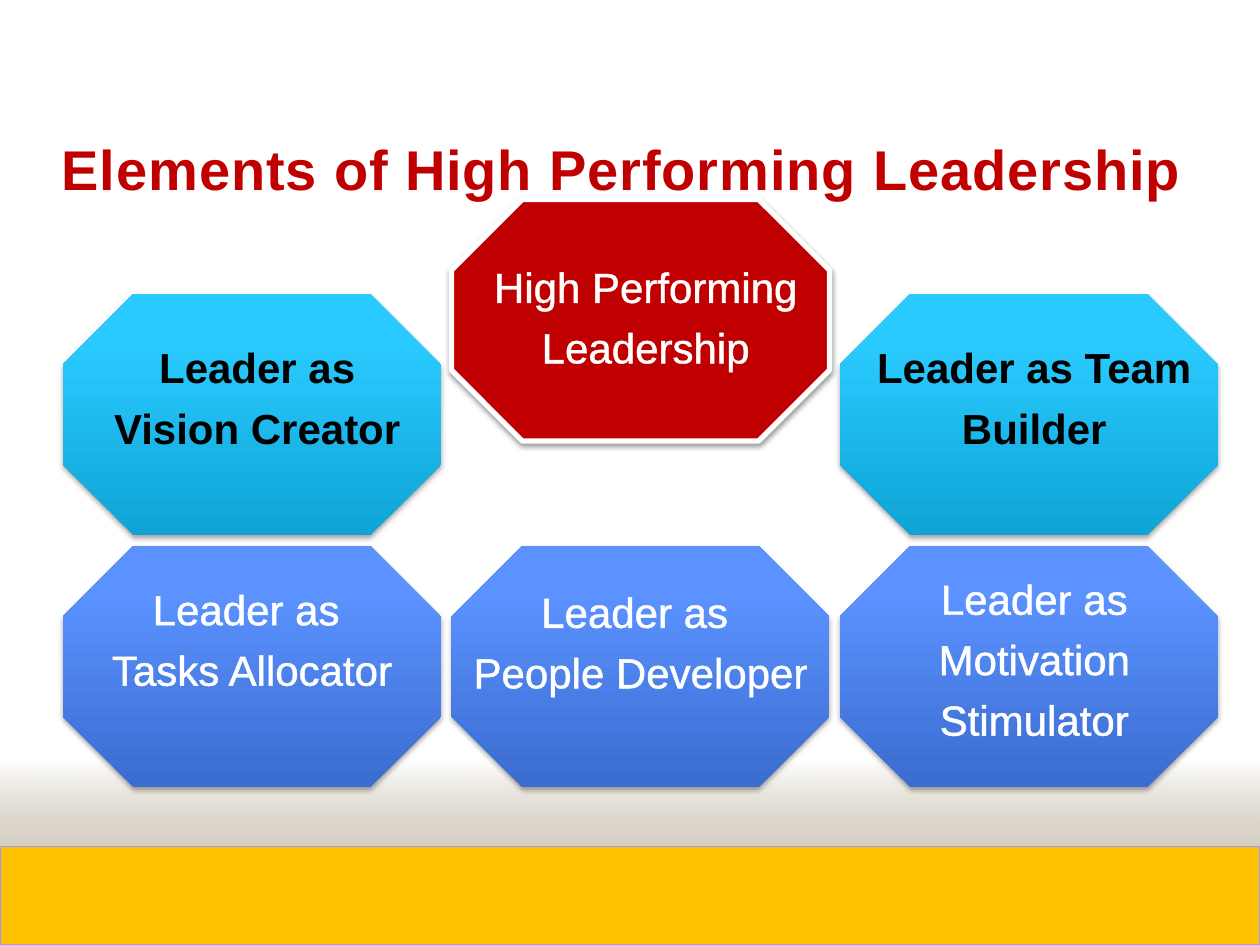
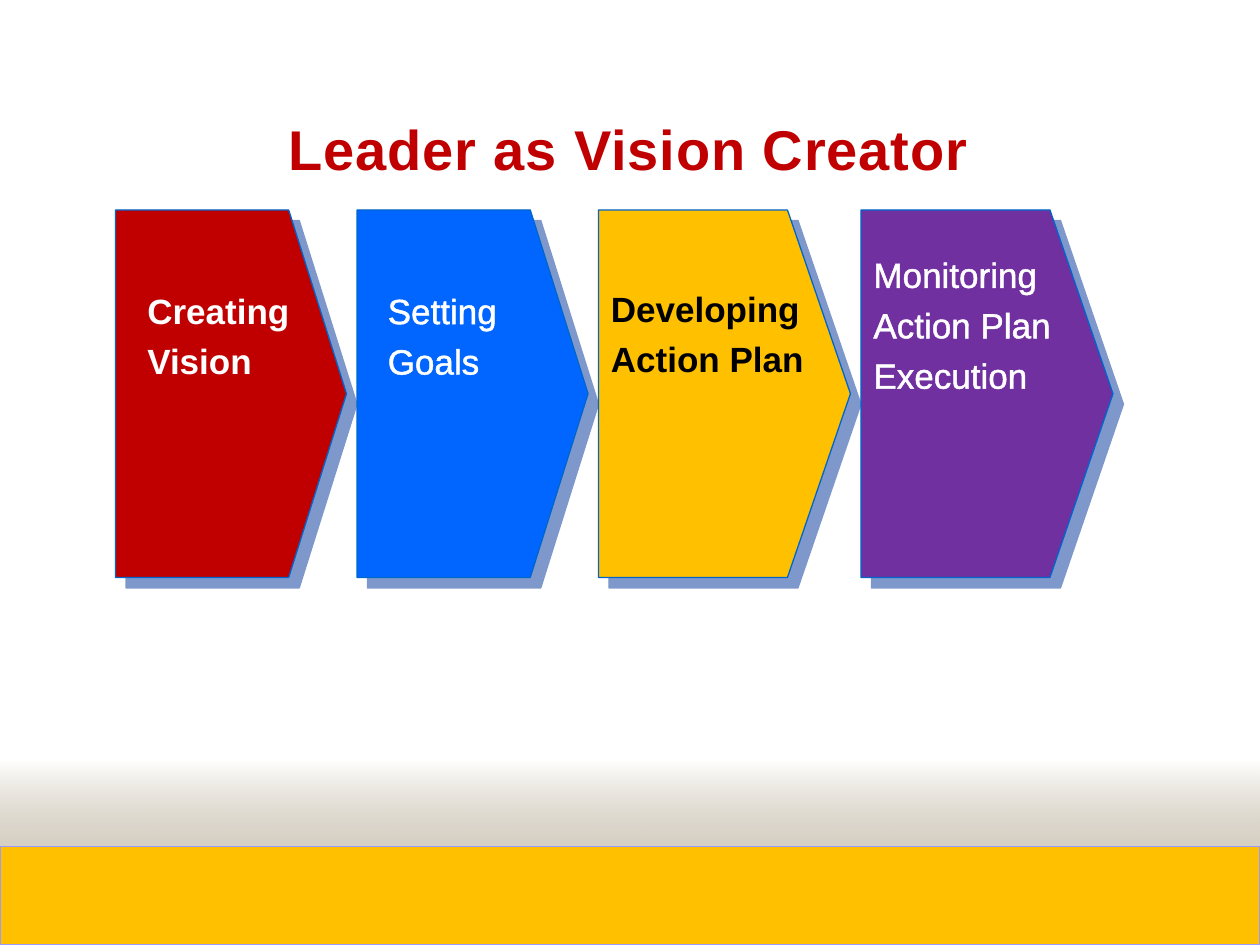
import pptx
import pptx.util
import pptx.dml.color
import pptx.enum.shapes
import pptx.enum.text
import pptx.oxml
import pptx.oxml.ns
import lxml.etree

FONT = "Arial"
COLUMNS, ROWS = 120, 90
COLORS = {
    "red": "C00000", "amber": "FFC000", "blue": "0066FF", "purple": "7030A0",
    "white": "FFFFFF", "black": "000000", "edge": "0066CC", "footer_edge": "9999FF",
    "arrow_shadow": "003399", "haze_top": "765E2F", "haze_bottom": "DDDDDD",
}
SKY = [(0, "0FA4D5", 100), (80, "29CAFF", 100), (100, "2BCAFF", 100)]
COBALT = [(0, "3B6CCF", 100), (80, "5B92FF", 100), (100, "5D93FF", 100)]
HAZE = [(0, COLORS["haze_top"], 0), (100, COLORS["haze_bottom"], 100)]
SOFT_SHADOW = (COLORS["black"], 35, 3.1, 1.8, 90)
FRAMED_SHADOW = (COLORS["black"], 38, 3.1, 1.6, 90)
ARROW_SHADOW = (COLORS["arrow_shadow"], 50, 0, 8.5, 45)
SHAPES = pptx.enum.shapes.MSO_SHAPE
ALIGN = pptx.enum.text.PP_ALIGN


def add_xml(parent, tag, **attributes):
    return lxml.etree.SubElement(
        parent, pptx.oxml.ns.qn("a:" + tag),
        {name: str(value) for name, value in attributes.items()})


def add_color(parent, color, opacity=100):
    node = add_xml(parent, "srgbClr", val=color)
    if opacity < 100:
        add_xml(node, "alpha", val=opacity * 1000)


class Deck:
    def __init__(self):
        self.presentation = pptx.Presentation()
        self.presentation.slide_width = pptx.util.Inches(10)
        self.presentation.slide_height = pptx.util.Inches(7.5)
        self.slide = None

    def place(self, column, row, columns, rows):
        across = self.presentation.slide_width / COLUMNS
        down = self.presentation.slide_height / ROWS
        return [round(v) for v in (column * across, row * down,
                                   columns * across, rows * down)]

    def start(self, title, column, row, columns):
        layout = self.presentation.slide_layouts[6]
        self.slide = self.presentation.slides.add_slide(layout)
        self.shape(SHAPES.RECTANGLE, (0, 72.4, COLUMNS, 17.6), HAZE, angle=270)
        heading = self.text((column, row, columns, 7.7), [title], 32, "red",
                            bold=True, spacing=1, wrap=False)
        for run in heading.text_frame.paragraphs[0].runs:
            run._r.get_or_add_rPr().set("spc", "50")

    def footer(self):
        self.shape(SHAPES.RECTANGLE, (0, 80.64, COLUMNS, 9.36), COLORS["amber"],
                   line=("footer_edge", 0.75))

    def shape(self, kind, box, fill, line=None, shadow=None, adjust=None, angle=90):
        shape = self.slide.shapes.add_shape(kind, *self.place(*box))
        if adjust is not None:
            shape.adjustments[0] = adjust
        if isinstance(fill, str):
            shape.fill.solid()
            shape.fill.fore_color.rgb = pptx.dml.color.RGBColor.from_string(fill)
        else:
            self.gradient(shape, fill, angle)
        if line:
            color, width = line
            shape.line.color.rgb = pptx.dml.color.RGBColor.from_string(COLORS[color])
            shape.line.width = pptx.util.Pt(width)
        else:
            shape.line.fill.background()
        shape.shadow.inherit = False
        if shadow:
            self.shadow(shape, *shadow)

    def gradient(self, shape, stops, angle):
        shape.fill.gradient()
        shape.fill.gradient_angle = angle
        stop_list = next(shape._element.spPr.iter(pptx.oxml.ns.qn("a:gsLst")))
        for stop in list(stop_list):
            stop_list.remove(stop)
        for position, color, opacity in stops:
            add_color(add_xml(stop_list, "gs", pos=position * 1000), color, opacity)

    def shadow(self, shape, color, opacity, blur, distance, direction):
        effects = shape._element.spPr.find(pptx.oxml.ns.qn("a:effectLst"))
        outer = add_xml(effects, "outerShdw", blurRad=pptx.util.Pt(blur),
                        dist=pptx.util.Pt(distance), dir=direction * 60000,
                        algn="ctr", rotWithShape=0)
        add_color(outer, color, opacity)

    def text(self, box, lines, size, color, bold=False, align=ALIGN.LEFT,
             spacing=1.2, wrap=True):
        label = self.slide.shapes.add_textbox(*self.place(*box))
        frame = label.text_frame
        frame.text = "\n".join(lines)
        frame.word_wrap = wrap
        frame.auto_size = pptx.enum.text.MSO_AUTO_SIZE.SHAPE_TO_FIT_TEXT
        for paragraph in frame.paragraphs:
            paragraph.alignment = align
            paragraph.line_spacing = spacing
            for run in paragraph.runs:
                run.font.name = FONT
                run.font.size = pptx.util.Pt(size)
                run.font.bold = bold
                run.font.color.rgb = pptx.dml.color.RGBColor.from_string(COLORS[color])
                if color == "white" and not bold:
                    self.outline(run, color)
        return label

    def outline(self, run, color):
        properties = run._r.get_or_add_rPr()
        line = add_xml(properties, "ln", w=pptx.util.Pt(1.45))
        add_color(add_xml(line, "solidFill"), COLORS[color])
        properties.insert(0, line)

    def element(self, column, row, fill, label_box, lines, color="white",
                line=None, shadow=SOFT_SHADOW):
        self.shape(SHAPES.OCTAGON, (column, row, 36, 23), fill, line, shadow, 0.293)
        self.text(label_box, lines, 24, color, color == "black", ALIGN.CENTER)

    def step(self, column, columns, fill, label_box, label, color, bold):
        self.shape(SHAPES.PENTAGON, (column, 20, columns, 35), COLORS[fill],
                   ("edge", 0.75), ARROW_SHADOW, 0.25)
        self.text(label_box, [label], 20, color, bold)


def add_elements(deck):
    deck.start("Elements of High Performing Leadership", 4.7, 12.2, 109.9)
    left, middle, right = 6, 43, 80
    upper, lower = 28, 52
    deck.element(left, upper, SKY, (8, 31, 33, 12.7),
                 ["Leader as Vision Creator"], "black")
    deck.element(left, lower, COBALT, (left, 54, 36, 12.7),
                 ["Leader as ", "Tasks Allocator"])
    deck.element(right, upper, SKY, (82, 31, 33, 12.7),
                 ["Leader as Team Builder"], "black")
    deck.element(right, lower, COBALT, (82, 53, 33, 18.5),
                 ["Leader as Motivation Stimulator"])
    deck.element(middle, lower, COBALT, (middle, 54.25, 36, 12.7),
                 ["Leader as ", "People Developer"])
    deck.element(middle, 19, COLORS["red"], (44, 23.3, 35, 12.7),
                 ["High Performing Leadership"], line=("white", 3),
                 shadow=FRAMED_SHADOW)
    deck.footer()


def add_vision_steps(deck):
    deck.start("Leader as Vision Creator", 26.3, 10.3, 67.7)
    steps = [
        (22, "red", (12.85, 26.15, 24.2, 10.8), "Creating Vision", "white", True),
        (22, "blue", (35.75, 26.15, 21.25, 10.8), "Setting Goals", "white", False),
        (24, "amber", (57, 26, 21, 10.8), "Developing Action Plan", "black", True),
        (24, "purple", (82, 22.7, 20, 15.4), "Monitoring Action Plan Execution",
         "white", False),
    ]
    column, gap = 11, 1
    for columns, *details in steps:
        deck.step(column, columns, *details)
        column += columns + gap
    deck.footer()


def main():
    deck = Deck()
    add_elements(deck)
    add_vision_steps(deck)
    deck.presentation.save("out.pptx")


if __name__ == "__main__":
    main()
